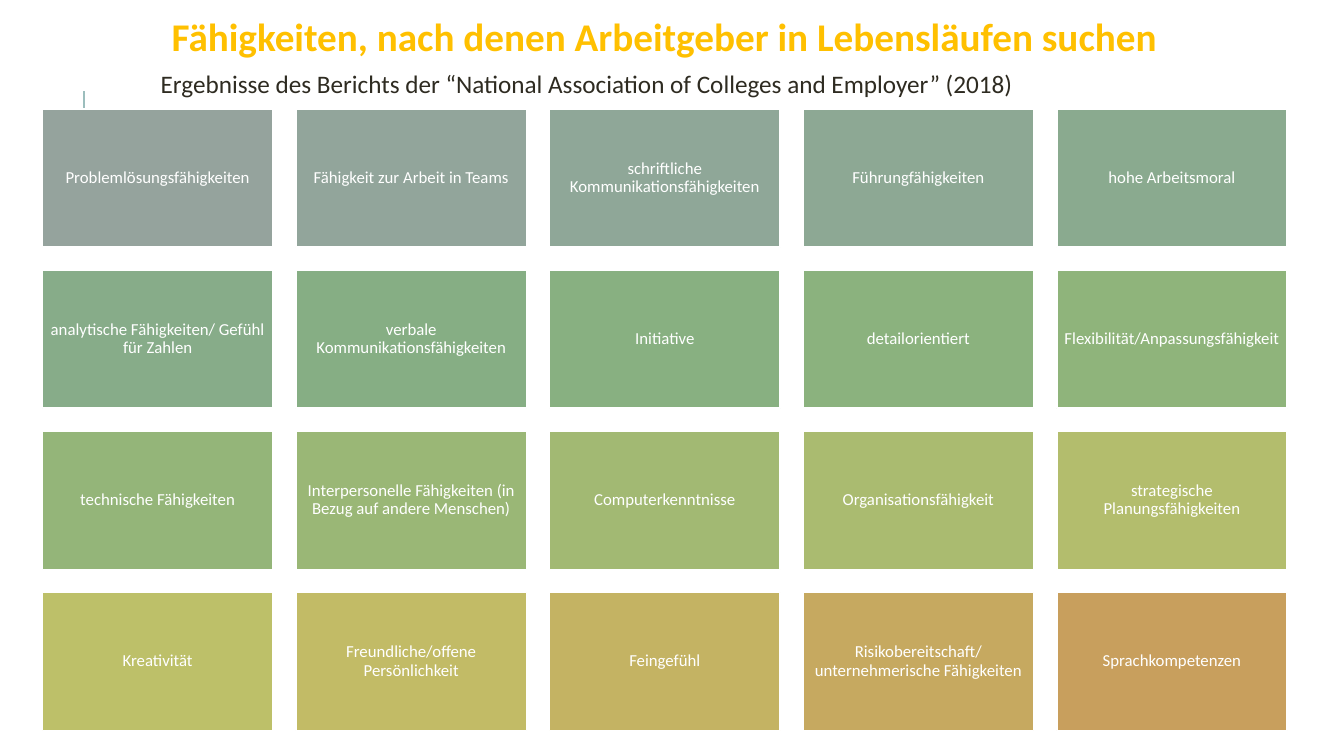
"""Builds a slide with a grid of skills that employers look for."""
from lxml.etree import SubElement as Sub
from pptx import Presentation as Deck
from pptx.dml.color import RGBColor as RGB
from pptx.enum.shapes import MSO_CONNECTOR as Link, MSO_SHAPE as Form
from pptx.enum.text import MSO_ANCHOR as Anchor, PP_ALIGN as Align
from pptx.oxml.ns import qn
from pptx.util import Cm, Pt

INK = {"title": "FFC000", "text": "2E2B21", "white": "FFFFFF", "rule": "9CBEBD"}
SKILLS = {
    "Problemlösungsfähigkeiten": "95A39D",
    "Fähigkeit zur Arbeit in Teams": "92A59B",
    "schriftliche Kommunikationsfähigkeiten": "8FA798",
    "Führungfähigkeiten": "8DA894",
    "hohe Arbeitsmoral": "8AAA8F",
    "analytische Fähigkeiten/ Gefühl für Zahlen": "87AC89",
    "verbale Kommunikationsfähigkeiten": "86AE84",
    "Initiative": "88B081",
    "detailorientiert": "8BB27E",
    "Flexibilität/Anpassungsfähigkeit": "8FB47B",
    "technische Fähigkeiten": "94B579",
    "Interpersonelle Fähigkeiten (in Bezug auf andere Menschen)": "9AB776",
    "Computerkenntnisse": "A2B973",
    "Organisationsfähigkeit": "AABB70",
    "strategische Planungsfähigkeiten": "B3BD6D",
    "Kreativität": "BDC069",
    "Freundliche/offene Persönlichkeit": "C2BB66",
    "Feingefühl": "C4B363",
    "Risikobereitschaft/ unternehmerische Fähigkeiten": "C6A960",
    "Sprachkompetenzen": "C89F5D",
}
COLS = 5
LEFT, TOP = 1.07, 2.75
WIDE, HIGH = 5.81, 3.48
STEP_X, STEP_Y = 6.39, 4.06


class Pen:
    font = "Calibri"
    frame = {"word_wrap": True, "vertical_anchor": Anchor.MIDDLE}
    inset = {f"margin_{side}": Cm(0.13) for side in ("left", "top", "right", "bottom")}

    def __init__(self, slide):
        self.slide = slide
        self.group = None

    def style(self, item, values):
        for name, value in values.items():
            setattr(item, name, value)

    def edge(self, line, ink, width):
        line.color.rgb = RGB.from_string(ink)
        line.width = Pt(width)

    def letter(self, frame, text, size, ink, align, bold=False, space=1.0):
        para = frame.paragraphs[0]
        self.style(para, {"alignment": align, "line_spacing": space})
        run = para.add_run()
        run.text = text
        self.style(run.font, {"name": self.font, "size": Pt(size), "bold": bold})
        run.font.color.rgb = RGB.from_string(ink)

    def label(self, box, text, size, ink, align, bold=False):
        frame = self.slide.shapes.add_textbox(*map(Cm, box)).text_frame
        self.style(frame, {"word_wrap": True})
        self.letter(frame, text, size, ink, align, bold)

    def tile(self, box, text, fill):
        if self.group is None:
            self.group = self.slide.shapes.add_group_shape()
        shape = self.group.shapes.add_shape(Form.RECTANGLE, *map(Cm, box))
        shape.shadow.inherit = False
        shape.fill.solid()
        shape.fill.fore_color.rgb = RGB.from_string(fill)
        self.edge(shape.line, INK["white"], 1.25)
        self.style(shape.text_frame, self.frame | self.inset)
        self.letter(shape.text_frame, text, 12, INK["white"], Align.CENTER, space=0.9)

    def rule(self, ends, ink, width):
        link = self.slide.shapes.add_connector(Link.STRAIGHT, *map(Cm, ends))
        self.edge(link.line, ink, width)
        Sub(link.element.spPr, qn("a:effectLst"))


def main():
    deck = Deck()
    deck.slide_width, deck.slide_height = Cm(33.87), Cm(19.05)
    pen = Pen(deck.slides.add_slide(deck.slide_layouts[6]))
    pen.rule((2.12, 4.83, 2.12, 2.29), INK["rule"], 1.5)
    for spot, (skill, fill) in enumerate(SKILLS.items()):
        row, col = divmod(spot, COLS)
        pen.tile((LEFT + col * STEP_X, TOP + row * STEP_Y, WIDE, HIGH), skill, fill)
    pen.label((1.7, 0.18, 30.07, 1.45), "Fähigkeiten, nach denen Arbeitgeber in Lebensläufen suchen",
              28, INK["title"], Align.CENTER, True)
    pen.label((3.8, 1.6, 26.29, 1.02),
              "Ergebnisse des Berichts der “National Association of Colleges and Employer” (2018)",
              18, INK["text"], Align.LEFT)
    deck.save("out.pptx")


if __name__ == "__main__":
    main()
